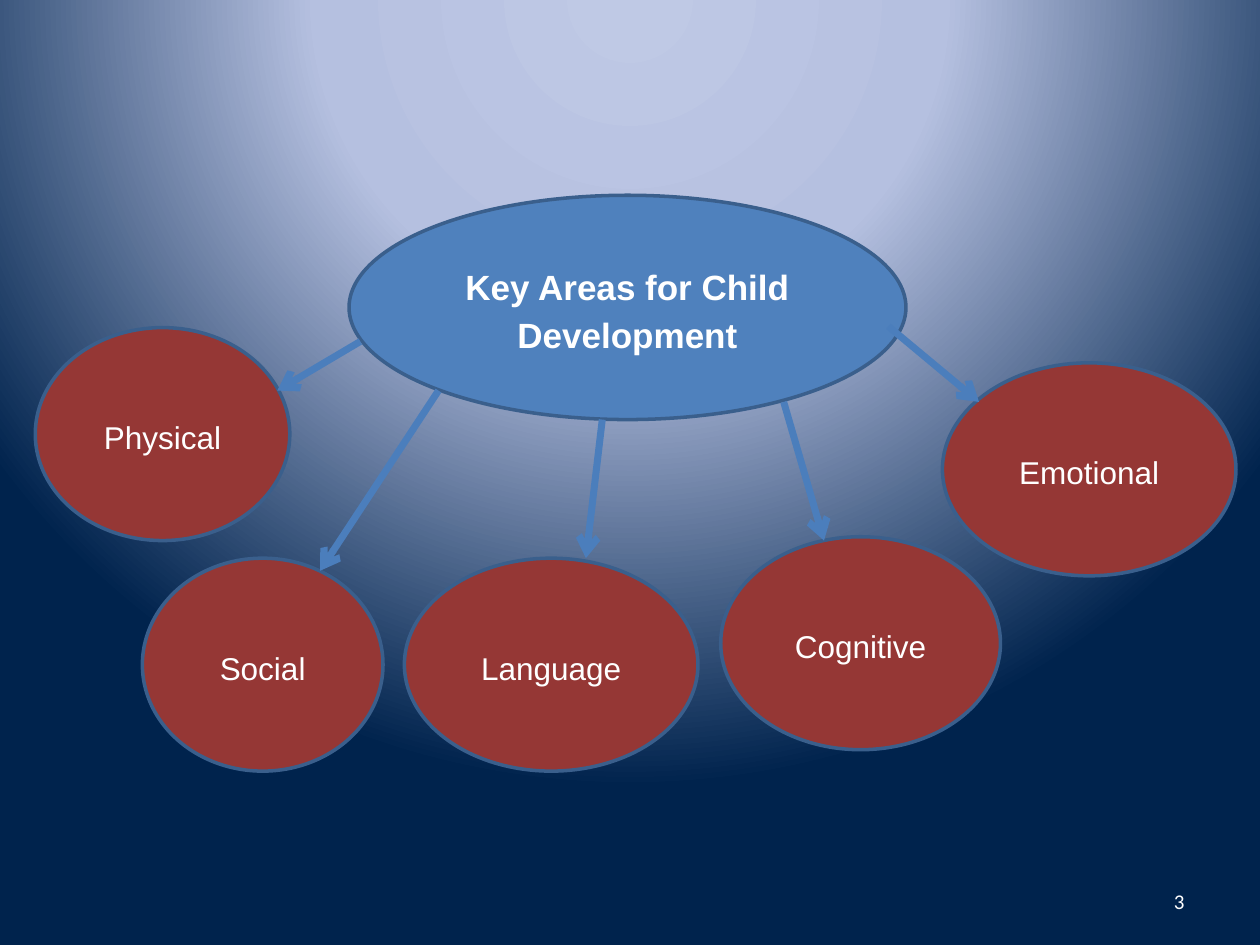
from pptx import Presentation
from pptx.dml.color import RGBColor
from pptx.enum.shapes import MSO_CONNECTOR, MSO_SHAPE
from pptx.enum.text import MSO_ANCHOR, PP_ALIGN
from pptx.oxml import parse_xml
from pptx.oxml.ns import nsdecls, qn
from pptx.util import Inches, Pt
from lxml import etree

ELLIPSE = MSO_SHAPE.OVAL
STRAIGHT = MSO_CONNECTOR.STRAIGHT
MIDDLE = MSO_ANCHOR.MIDDLE
CENTER, RIGHT = PP_ALIGN.CENTER, PP_ALIGN.RIGHT

WIDTH, HEIGHT = 10, 7.5
COLUMNS, ROWS = 100, 75
AREA_HEIGHT = 16.9

BACKGROUND_STOPS = [(0, "BFC9E5"), (40, "B5C0E0"), (100, "00234D")]
AREAS = [
    ("Social", 11.3, 44.3, 19.1),
    ("Language", 32.1, 44.3, 23.3),
    ("Cognitive", 57.2, 42.6, 22.2),
    ("Physical", 2.8, 26, 20.2),
    ("Emotional", 74.8, 28.8, 23.3),
]
ARROWS = [
    ((28.6, 27.1), (22, 31)),
    ((34.8, 31), (25.4, 45.3)),
    ((47.8, 33.3), (46.5, 44.3)),
    ((62.2, 31.9), (65.4, 42.9)),
    ((70.5, 25.9), (77.7, 31.9)),
]


def color(value):
    return RGBColor.from_string(value)


def write(shape, text, size, font="Arial", bold=False, align=CENTER, line_spacing=None, space_after=0):
    frame = shape.text_frame
    frame.word_wrap = True
    frame.vertical_anchor = MIDDLE
    paragraph = frame.paragraphs[0]
    paragraph.alignment = align
    paragraph.line_spacing = line_spacing
    paragraph.space_after = Pt(space_after)
    run = paragraph.add_run()
    run.text = text
    run.font.name = font
    run.font.size = Pt(size)
    run.font.bold = bold
    run.font.color.rgb = color("FFFFFF")


class DiagramSlide:
    """Draws the diagram's elements on one slide, placed by columns and rows."""

    center_fill = "4F81BD"
    area_fill = "953735"
    outline = "3A5F8C"
    arrow_color = "4B7EBC"

    def __init__(self, presentation):
        self.column = presentation.slide_width / COLUMNS
        self.row = presentation.slide_height / ROWS
        self.slide = presentation.slides.add_slide(presentation.slide_layouts[6])

    def place(self, column, row):
        return round(column * self.column), round(row * self.row)

    def background(self, stops):
        self.slide.background.fill.solid()
        solid = self.slide.element.find(".//" + qn("a:solidFill"))
        stop_list = "".join(
            f'<a:gs pos="{share * 1000}"><a:srgbClr val="{value}"/></a:gs>' for share, value in stops
        )
        gradient = parse_xml(
            f'<a:gradFill {nsdecls("a")} rotWithShape="1"><a:gsLst>{stop_list}</a:gsLst>'
            '<a:path path="circle"><a:fillToRect l="50000" t="-80000" r="50000" b="180000"/></a:path>'
            "</a:gradFill>"
        )
        solid.getparent().replace(solid, gradient)

    def label(self, text, column, row, width, height, **text_format):
        box = self.slide.shapes.add_textbox(*self.place(column, row), *self.place(width, height))
        write(box, text, **text_format)

    def ellipse(self, text, column, row, width, height, fill, **text_format):
        shape = self.slide.shapes.add_shape(
            ELLIPSE, *self.place(column, row), *self.place(width, height)
        )
        shape.shadow.inherit = False
        shape.fill.solid()
        shape.fill.fore_color.rgb = color(fill)
        shape.line.color.rgb = color(self.outline)
        shape.line.width = Pt(2)
        write(shape, text, line_spacing=1.15, space_after=10, **text_format)

    def arrow(self, start, end):
        connector = self.slide.shapes.add_connector(STRAIGHT, *self.place(*start), *self.place(*end))
        connector.line.color.rgb = color(self.arrow_color)
        connector.line.width = Pt(4)
        properties = connector.element.spPr
        etree.SubElement(properties.find(qn("a:ln")), qn("a:tailEnd"), type="arrow")
        etree.SubElement(properties, qn("a:effectLst"))


def main():
    presentation = Presentation()
    presentation.slide_width = Inches(WIDTH)
    presentation.slide_height = Inches(HEIGHT)
    diagram = DiagramSlide(presentation)
    diagram.background(BACKGROUND_STOPS)
    diagram.label("3", 71.7, 69.5, 23.3, 4, size=12, font="Calibri", align=RIGHT)
    diagram.ellipse(
        "Key Areas for Child Development", 27.7, 15.5, 44.2, 17.8, diagram.center_fill, size=20, bold=True
    )
    for name, column, row, width in AREAS:
        diagram.ellipse(name, column, row, width, AREA_HEIGHT, diagram.area_fill, size=18)
    for start, end in ARROWS:
        diagram.arrow(start, end)
    presentation.save("out.pptx")


if __name__ == "__main__":
    main()
